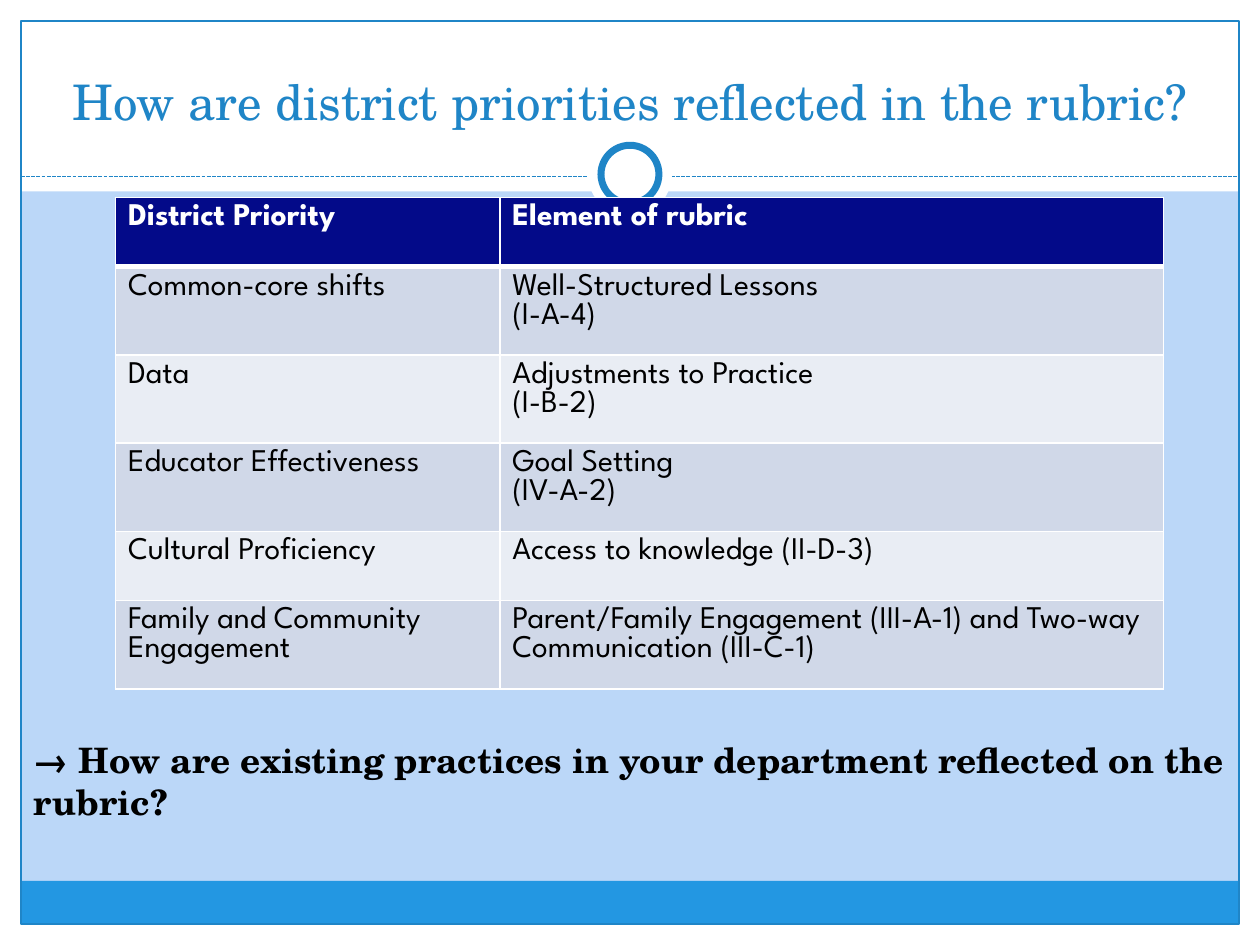
from lxml.etree import SubElement
from pptx import Presentation
from pptx.dml.color import RGBColor
from pptx.enum.dml import MSO_LINE
from pptx.enum.shapes import MSO_CONNECTOR, MSO_SHAPE
from pptx.enum.text import MSO_ANCHOR, MSO_AUTO_SIZE, PP_ALIGN
from pptx.oxml import parse_xml
from pptx.oxml.ns import nsdecls, qn
from pptx.util import Inches, Pt

COLORS = {
    "page": "BBD7F8", "white": "FFFFFF", "accent": "1F85C7", "footer": "2397E2",
    "header": "030A89", "odd": "D0D8E8", "even": "E9EDF4", "text": "000000",
}
COLS, ROWS = 60, 45
TITLE = {"name": "TeX Gyre Schola", "size": Pt(28), "bold": False}
QUESTION = {"name": "TeX Gyre Schola", "size": Pt(20), "bold": True}
HEADER = {"name": "League Spartan", "size": Pt(18), "bold": True}
CELL = {**HEADER, "bold": False}

PRIORITIES = [
    ("District Priority", "Element of rubric"),
    ("Common-core shifts", "Well-Structured Lessons\n(I-A-4)"),
    ("Data", "Adjustments to Practice\n(I-B-2)"),
    ("Educator Effectiveness", "Goal Setting\n(IV-A-2)"),
    ("Cultural Proficiency", "Access to knowledge (II-D-3)"),
    ("Family and Community Engagement",
     "Parent/Family Engagement (III-A-1) and Two-way Communication (III-C-1)"),
]


def rgb(name):
    return RGBColor.from_string(COLORS[name])


class SlideBuilder:
    def __init__(self, prs):
        self.unit_x = prs.slide_width / COLS
        self.unit_y = prs.slide_height / ROWS
        self.s = prs.slides.add_slide(prs.slide_layouts[1])
        self.s.background.fill.solid()
        self.s.background.fill.fore_color.rgb = rgb("page")

    def x(self, cols):
        return round(cols * self.unit_x)

    def y(self, rows):
        return round(rows * self.unit_y)

    def box(self, left, top, width, height):
        return self.x(left), self.y(top), self.x(width), self.y(height)

    def set_text(self, tf, text, style, color, align=PP_ALIGN.LEFT):
        tf.text = text
        for p in tf.paragraphs:
            p.alignment = align
            for r in p.runs:
                for name, value in style.items():
                    setattr(r.font, name, value)
                r.font.color.rgb = rgb(color)

    def shape(self, kind, area, fill=None, line=None, weight=0.75):
        sp = self.s.shapes.add_shape(kind, *self.box(*area))
        sp.shadow.inherit = False
        if fill:
            sp.fill.solid()
            sp.fill.fore_color.rgb = rgb(fill)
        else:
            sp.fill.background()
        if line:
            sp.line.color.rgb = rgb(line)
            sp.line.width = Pt(weight)
        else:
            sp.line.fill.background()

    def dashed_rule(self, left, right, row):
        sp = self.s.shapes.add_connector(
            MSO_CONNECTOR.STRAIGHT, self.x(left), self.y(row), self.x(right), self.y(row))
        sp.line.color.rgb = rgb("accent")
        sp.line.width = Pt(0.75)
        sp.line.dash_style = MSO_LINE.SQUARE_DOT
        SubElement(sp.element.spPr, qn("a:effectLst"))

    def placeholder(self, idx, area, text, style, color, align, anchor):
        sp = self.s.placeholders[idx]
        self.s.shapes.element.append(sp.element)
        sp.left, sp.top, sp.width, sp.height = self.box(*area)
        tf = sp.text_frame
        frame = {"word_wrap": True, "auto_size": MSO_AUTO_SIZE.NONE, "vertical_anchor": anchor}
        for name, value in frame.items():
            setattr(tf, name, value)
        self.set_text(tf, text, style, color, align)
        return tf

    def title(self, area, text):
        self.placeholder(0, area, text, TITLE, "accent", PP_ALIGN.CENTER, MSO_ANCHOR.BOTTOM)

    def body(self, area, text):
        tf = self.placeholder(1, area, text, QUESTION, "text", PP_ALIGN.LEFT, MSO_ANCHOR.TOP)
        for p in tf.paragraphs:
            p.space_before = Pt(4)
            pPr = p._p.get_or_add_pPr()
            pPr.set("marL", "0")
            pPr.set("indent", "0")
            SubElement(pPr, qn("a:buNone"))

    def borders(self, cell, weights):
        tcPr = cell._tc.get_or_add_tcPr()
        for i, (side, weight) in enumerate(weights.items()):
            tcPr.insert(i, parse_xml(
                f'<a:ln{side} {nsdecls("a")} w="{Pt(weight)}"><a:solidFill>'
                f'<a:srgbClr val="{COLORS["white"]}"/></a:solidFill></a:ln{side}>'))

    def table(self, left, top, widths, heights, rows):
        area = self.box(left, top, sum(widths), sum(heights))
        table = self.s.shapes.add_table(len(rows), len(widths), *area).table
        for column, width in zip(table.columns, widths):
            column.width = self.x(width)
        for i, (row, height, texts) in enumerate(zip(table.rows, heights, rows)):
            row.height = self.y(height)
            fill = "header" if i == 0 else ("even", "odd")[i % 2]
            style, color = (HEADER, "white") if i == 0 else (CELL, "text")
            weights = {"L": 1, "R": 1, "T": 3 if i == 1 else 1, "B": 3 if i == 0 else 1}
            for cell, text in zip(row.cells, texts):
                self.set_text(cell.text_frame, text, style, color)
                cell.fill.solid()
                cell.fill.fore_color.rgb = rgb(fill)
                self.borders(cell, weights)


def main():
    prs = Presentation()
    prs.slide_width, prs.slide_height = Inches(10), Inches(7.5)
    slide = SlideBuilder(prs)
    rect, oval = MSO_SHAPE.RECTANGLE, MSO_SHAPE.OVAL

    margins = [(0, 44, COLS, 1), (0, 0, COLS, 9.12), (0, 0, 1, ROWS), (59, 0, 1, ROWS)]
    for area in margins:
        slide.shape(rect, area, "white")
    slide.shape(rect, (1, 41.95, 58, 2.05), "footer")
    slide.shape(rect, (1, 1, 58, 43), line="accent")
    slide.dashed_rule(1, 59, 8.4)
    slide.shape(oval, (28, 6.3, 4, 4), "white")
    slide.shape(oval, (28.62, 6.92, 2.76, 2.76), "white", "accent", 4)

    slide.title((2, 1.5, 56, 5), "How are district priorities reflected in the rubric?")
    slide.body((1, 34.86, 58.2, 14.2),
               "→ How are existing practices in your department reflected on the rubric?")
    slide.table(5.5, 9.4, (18.3, 31.6), (3.3, 4.2, 4.2, 4.2, 3.3, 4.2), PRIORITIES)
    prs.save("out.pptx")


if __name__ == "__main__":
    main()
